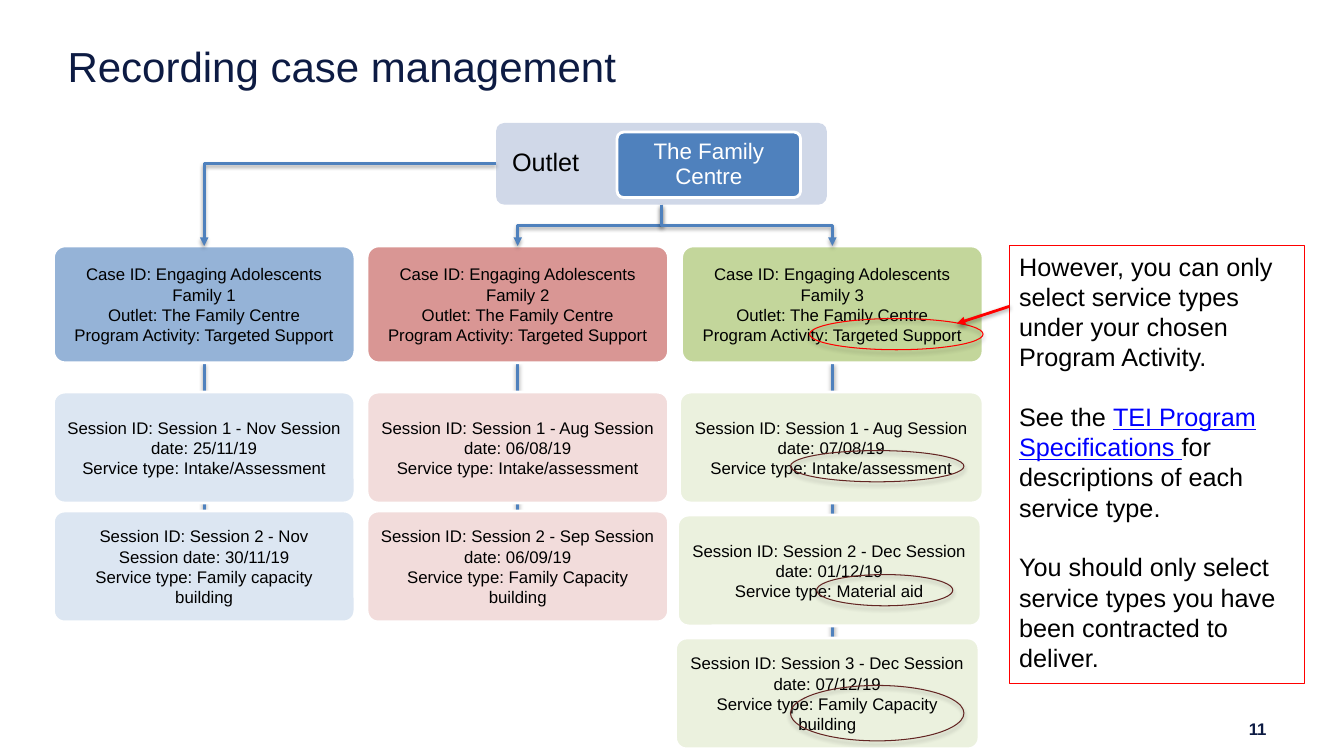
from lxml import etree
from pptx import Presentation
from pptx.dml.color import RGBColor
from pptx.enum.shapes import MSO_CONNECTOR as LINK, MSO_SHAPE as SHAPE
from pptx.enum.text import MSO_ANCHOR as ANCHOR, PP_ALIGN as ALIGN
from pptx.oxml.ns import qn
from pptx.util import Inches, Pt

NAVY = RGBColor(0x0D, 0x1B, 0x43)
BLUE = RGBColor(0x4F, 0x81, 0xBD)
PALE = RGBColor(0xD0, 0xD8, 0xE8)
WHITE = RGBColor(0xFF, 0xFF, 0xFF)
BLACK = RGBColor(0, 0, 0)
RED = RGBColor(0xFF, 0, 0)
MAROON = RGBColor(0x63, 0x25, 0x23)
LINKED = RGBColor(0, 0, 0xFF)

CARD_W, CASE_H, CARD_H = 2.99, 1.16, 1.1
LEFT, STEP = 0.53, 3.11
CASE_TOP, CARD_TOP = 2.44, 3.89

# Case colour, session colour, row step, sideways drift per row, trunk end, sessions
FAMILIES = [
    (RGBColor(0x95, 0xB3, 0xD7), RGBColor(0xDC, 0xE6, 0xF2), 1.18, 0, 5.07, [
        ["Session ID: Session 1 - Nov Session date: 25/11/19",
         "Service type: Intake/Assessment"],
        ["Session ID: Session 2 - Nov", "Session date: 30/11/19",
         "Service type: Family capacity building"]]),
    (RGBColor(0xD9, 0x96, 0x94), RGBColor(0xF2, 0xDC, 0xDB), 1.18, 0, 5.17, [
        ["Session ID: Session 1 - Aug Session date: 06/08/19",
         "Service type: Intake/assessment"],
        ["Session ID: Session 2 - Sep Session date: 06/09/19",
         "Service type: Family Capacity building"]]),
    (RGBColor(0xC3, 0xD6, 0x9B), RGBColor(0xEB, 0xF1, 0xDE), 1.22, 0.02, 6.51, [
        ["Session ID: Session 1 - Aug Session date: 07/08/19",
         "Service type: Intake/assessment"],
        ["Session ID: Session 2 - Dec Session date: 01/12/19",
         "Service type: Material aid"],
        ["Session ID: Session 3 - Dec Session date: 07/12/19",
         "Service type: Family Capacity building"]]),
]
RINGS = [(7.84, 4.47, 1.72, 0.31, MAROON), (8.1, 5.7, 1.35, 0.31, MAROON),
         (7.84, 6.8, 1.72, 0.55, MAROON), (8.03, 3.16, 1.72, 0.31, RED)]
NOTE = ["However, you can only select service types under your chosen Program Activity.",
        ["See the ", ("TEI Program Specifications ", LINKED),
         "for descriptions of each service type."],
        "You should only select service types you have been contracted to deliver."]


def write(shape, lines, size=12, color=BLACK, bold=False, align=ALIGN.CENTER,
          anchor=ANCHOR.MIDDLE, pad=(0.1, 0.07), gap=0, spacing=None):
    """Each line is a string or a list of runs; a (text, colour) run is underlined."""
    frame = shape.text_frame
    frame.word_wrap = True
    frame.vertical_anchor = anchor
    frame.margin_left = frame.margin_right = Inches(pad[0])
    frame.margin_top = frame.margin_bottom = Inches(pad[1])
    for i, line in enumerate(lines):
        para = frame.add_paragraph() if i else frame.paragraphs[0]
        para.alignment = align
        if spacing:
            para.line_spacing = spacing
        if i and gap:
            para.space_before = Pt(gap)
        for part in [line] if isinstance(line, str) else line:
            plain = isinstance(part, str)
            run = para.add_run()
            run.text = part if plain else part[0]
            font = run.font
            font.name, font.size, font.bold = "Arial", Pt(size), bold
            font.color.rgb = color if plain else part[1]
            if not plain:
                font.underline = True


def draw(slide, kind, box, fill=None, line=None, width=2.0):
    shape = slide.shapes.add_shape(kind, *map(Inches, box))
    shape.shadow.inherit = False
    if kind == SHAPE.ROUNDED_RECTANGLE:
        shape.adjustments[0] = 0.1
    if fill is None:
        shape.fill.background()
    else:
        shape.fill.solid()
        shape.fill.fore_color.rgb = fill
    if line is None:
        shape.line.fill.background()
    else:
        shape.line.color.rgb = line
        shape.line.width = Pt(width)
    return shape


def shade(shape, dist=1.6, alpha=38):
    """Give a soft shadow straight below; the line must be set already."""
    props = shape._element.spPr
    effect = props.find(qn("a:effectLst"))
    if effect is None:
        effect = etree.SubElement(props, qn("a:effectLst"))
    cast = etree.SubElement(effect, qn("a:outerShdw"), blurRad=str(Pt(3.1)),
                            dist=str(Pt(dist)), dir="5400000", rotWithShape="0")
    tint = etree.SubElement(cast, qn("a:srgbClr"), val="000000")
    etree.SubElement(tint, qn("a:alpha"), val=str(alpha * 1000))


def join(slide, start, end, color=BLUE, kind=LINK.STRAIGHT, arrow=True):
    link = slide.shapes.add_connector(kind, *map(Inches, start + end))
    link.line.color.rgb = color
    link.line.width = Pt(2)
    if arrow:
        etree.SubElement(link.line._get_or_add_ln(), qn("a:tailEnd"), type="triangle")
    shade(link)
    return link


def bend(slide, top, side, case):
    """Elbow from a side of the top box to the top of a case card."""
    link = join(slide, (0, 0), (1, 1), kind=LINK.ELBOW)
    link.begin_connect(top, side)
    link.end_connect(case, 0)
    x1, y1, x2, y2 = link.begin_x, link.begin_y, link.end_x, link.end_y
    wide, high = abs(x2 - x1), abs(y2 - y1)
    frame = link._element.spPr.find(qn("a:xfrm"))
    for flip in ("flipH", "flipV"):
        frame.attrib.pop(flip, None)
    if side == 1:
        link._element.spPr.find(qn("a:prstGeom")).set("prst", "bentConnector2")
        turn, flip = 180, "flipV"
    else:
        turn, flip = (90, None) if x2 < x1 else (270, "flipH")
        wide, high = high, wide
    link.left, link.top = (x1 + x2 - wide) // 2, (y1 + y2 - high) // 2
    link.width, link.height = wide, high
    frame.set("rot", str(turn * 60000))
    if flip:
        frame.set(flip, "1")


def head(slide, prs):
    title = slide.shapes.title
    title.left, title.top, title.width, title.height = map(Inches, (0.67, 0.4, 12, 0.66))
    write(title, ["Recording case management"], size=30, color=NAVY,
          align=ALIGN.LEFT, anchor=ANCHOR.TOP, pad=(0, 0))
    number = slide.shapes.add_textbox(*map(Inches, (11.57, 7.12, 1.09, 0.23)))
    write(number, ["11"], color=NAVY, bold=True, align=ALIGN.RIGHT, pad=(0.1, 0.05))


def outlet(slide, x, y, w, h):
    base = draw(slide, SHAPE.ROUNDED_RECTANGLE, (x, y, w, h), PALE)
    label = slide.shapes.add_textbox(*map(Inches, (x, y, 0.3 * w, h)))
    write(label, ["Outlet"], size=18, spacing=0.9)
    name = draw(slide, SHAPE.ROUNDED_RECTANGLE, (x + 1.2, y + 0.09, 1.82, 0.65),
                BLUE, WHITE)
    write(name, ["The Family Centre"], size=16, color=WHITE, spacing=0.9)
    return base


def family(slide, col, tone, tint, step, drift, stop, sessions):
    x = LEFT + col * STEP + (0.01 if col == 2 else 0)
    case = draw(slide, SHAPE.ROUNDED_RECTANGLE, (x, CASE_TOP, CARD_W, CASE_H),
                tone, WHITE)
    write(case, [f"Case ID: Engaging Adolescents Family {col + 1}",
                 "Outlet: The Family Centre", "Program Activity: Targeted Support"])
    for row, lines in enumerate(sessions):
        box = (x - drift * (row + 1), CARD_TOP + row * step,
               CARD_W + drift, CARD_H)
        write(draw(slide, SHAPE.ROUNDED_RECTANGLE, box, tint, WHITE), lines)
    mid = x + CARD_W / 2
    trunk = join(slide, (mid, CASE_TOP + CASE_H), (mid, stop), arrow=False)
    trunk.begin_connect(case, 2)
    slide.shapes._spTree.insert(2, trunk._element)  # behind the cards
    return case


def advice(slide, x, y, w, h):
    for *box, color in RINGS:
        shade(draw(slide, SHAPE.OVAL, box, line=color, width=0.75), 1.8, 35)
    note = draw(slide, SHAPE.RECTANGLE, (x, y, w, h), line=RED, width=0.75)
    write(note, NOTE, size=18, align=ALIGN.LEFT, anchor=ANCHOR.TOP,
          pad=(0.1, 0.05), gap=21)
    join(slide, (x, y + 0.6), (x - 0.52, y + 0.77), RED)


def main():
    prs = Presentation()
    prs.slide_width, prs.slide_height = Inches(13.33), Inches(7.5)
    slide = prs.slides.add_slide(prs.slide_layouts[5])
    head(slide, prs)
    top = outlet(slide, 4.92, 1.22, 3.28, 0.81)
    cases = [family(slide, col, *data) for col, data in enumerate(FAMILIES)]
    for side, case in zip((1, 2, 2), cases):
        bend(slide, top, side, case)
    advice(slide, 10.01, 2.44, 2.93, 4.34)
    prs.save("out.pptx")


if __name__ == "__main__":
    main()
